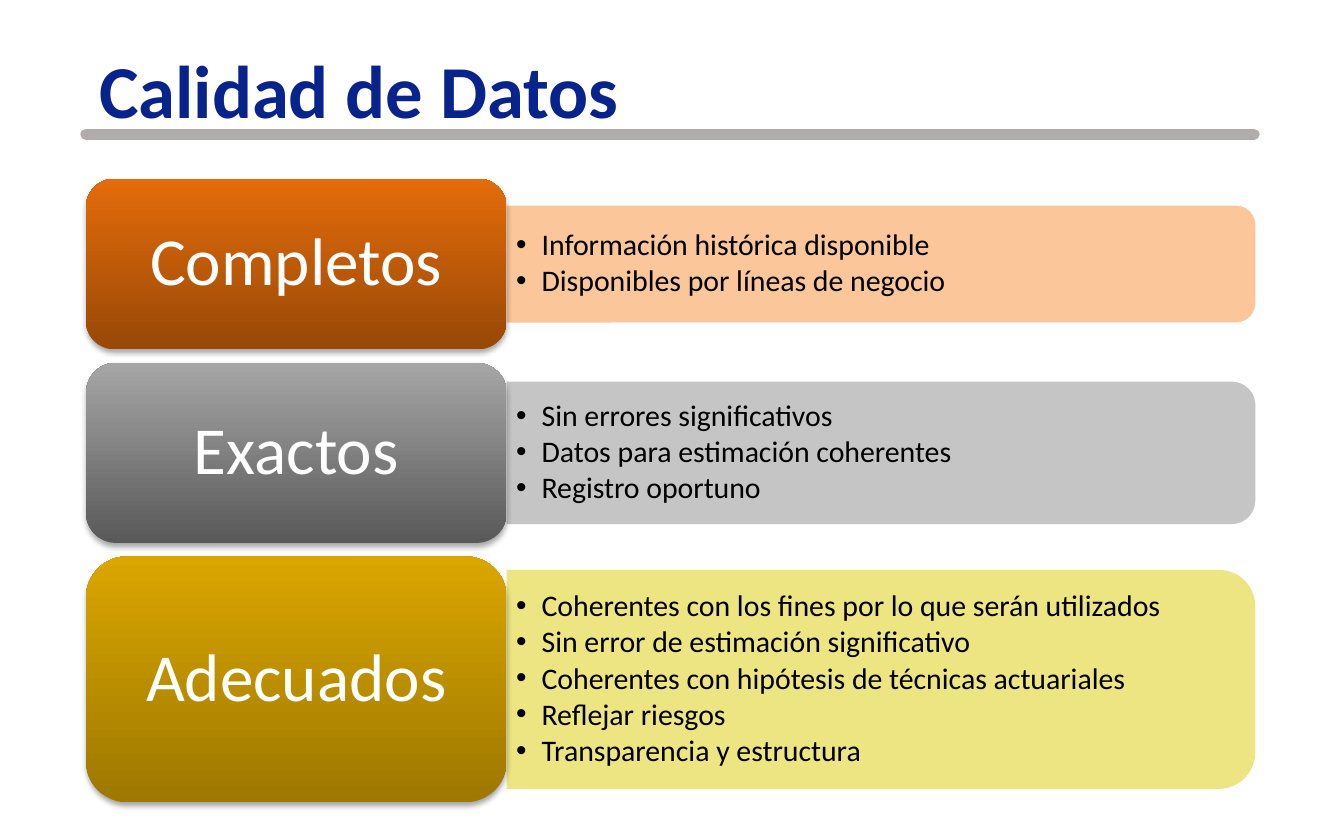
from lxml import etree
from pptx import Presentation
from pptx.dml.color import RGBColor
from pptx.enum.shapes import MSO_CONNECTOR, MSO_SHAPE
from pptx.enum.text import MSO_ANCHOR, PP_ALIGN
from pptx.oxml import parse_xml
from pptx.oxml.ns import qn
from pptx.util import Inches, Pt

CARD, PANEL = MSO_SHAPE.ROUNDED_RECTANGLE, MSO_SHAPE.ROUND_2_SAME_RECTANGLE
STRAIGHT = MSO_CONNECTOR.STRAIGHT
MIDDLE, CENTER = MSO_ANCHOR.MIDDLE, PP_ALIGN.CENTER
NS = 'xmlns:a="http://schemas.openxmlformats.org/drawingml/2006/main"'
SHADOW = (f'<a:outerShdw {NS} blurRad="40000" dist="23000" dir="5400000" rotWithShape="0">'
          '<a:srgbClr val="000000"><a:alpha val="35000"/></a:srgbClr></a:outerShdw>')


def color(text):
    return RGBColor.from_string(text)


def write(frame, lines, size, hue, pad):
    """Fill a text frame with one paragraph per line."""
    frame.word_wrap = True
    frame.vertical_anchor = MIDDLE
    frame.margin_left = frame.margin_right = Inches(pad)
    frame.margin_top = frame.margin_bottom = Inches(pad / 2)
    frame.text = "\n".join(lines)
    for para in frame.paragraphs:
        para.line_spacing = 0.9
        para.font.name = "Calibri"
        para.font.size = Pt(size)
        para.font.color.rgb = color(hue)


prs = Presentation()
prs.slide_width, prs.slide_height = Inches(10), Inches(6.25)
slide = prs.slides.add_slide(prs.slide_layouts[6])
shapes = slide.shapes

# Title
title = shapes.add_textbox(Inches(0.64), Inches(0.28), Inches(8.7), Inches(0.77))
title.text_frame.word_wrap = True
para = title.text_frame.paragraphs[0]
para.text = "Calidad de Datos"
para.font.name, para.font.size, para.font.bold = "Calibri", Pt(40), True
para.font.color.rgb = color("08238B")

# Rule under the title
rule = shapes.add_connector(STRAIGHT, Inches(0.64), Inches(1), Inches(9.33), Inches(1))
rule.line.color.rgb = color("B0ACAB")
rule.line.width = Pt(6)
rule.line._get_or_add_ln().set("cap", "rnd")
etree.SubElement(rule._element.spPr, qn("a:effectLst"))

# Rows: name, card height, panel height, dark, light, panel colour, points
rows = [
    ("Completos", 1.27, 0.87, "984807", "E46C0A", "FAC090",
     ["Información histórica disponible", "Disponibles por líneas de negocio"]),
    ("Exactos", 1.34, 1.06, "595959", "A6A6A6", "BFBFBF",
     ["Sin errores significativos", "Datos para estimación coherentes",
      "Registro oportuno"]),
    ("Adecuados", 1.83, 1.63, "9E7800", "DAA600", "EBE375",
     ["Coherentes con los fines por lo que serán utilizados",
      "Sin error de estimación significativo",
      "Coherentes con hipótesis de técnicas actuariales",
      "Reflejar riesgos", "Transparencia y estructura"]),
]
left, wide, span, gap = 0.64, 3.13, 5.57, 0.1
edge = left + wide
top = 1.33
for name, high, depth, dark, light, tint, points in rows:
    mid = top + high / 2

    # Panel, turned so that its round corners face right
    panel = shapes.add_shape(PANEL, Inches(edge + (span - depth) / 2),
                             Inches(mid - span / 2), Inches(depth), Inches(span))
    panel.rotation = 90
    panel.shadow.inherit = False
    panel.fill.solid()
    panel.fill.fore_color.rgb = color(tint)
    shade = panel._element.spPr.find(".//" + qn("a:srgbClr"))
    etree.SubElement(shade, qn("a:alpha"), val="90000")
    panel.line.fill.background()

    # Bulleted points
    box = shapes.add_textbox(Inches(edge), Inches(mid - depth / 2),
                             Inches(5.5), Inches(depth))
    write(box.text_frame, points, 16, "000000", 0.07)
    for para in box.text_frame.paragraphs:
        para.space_after = Pt(2.1)
        props = para._p.get_or_add_pPr()
        props.set("marL", str(Inches(0.19)))
        props.set("indent", str(-Inches(0.19)))
        etree.SubElement(props, qn("a:buFont"), typeface="Arial")
        etree.SubElement(props, qn("a:buChar"), char="•")
        # Default run properties come after the bullet
        props.append(props.find(qn("a:defRPr")))

    # Card with its name
    card = shapes.add_shape(CARD, Inches(left), Inches(top), Inches(wide), Inches(high))
    card.fill.gradient()
    card.fill.gradient_angle = 90
    for stop, hue in zip(card.fill.gradient_stops, (dark, light)):
        stop.color.rgb = color(hue)
    card.line.fill.background()
    card.shadow.inherit = False
    card._element.spPr.find(qn("a:effectLst")).append(parse_xml(SHADOW))
    write(card.text_frame, [name], 36, "FFFFFF", 0.15)
    card.text_frame.paragraphs[0].alignment = CENTER

    top += high + gap

prs.save("out.pptx")
